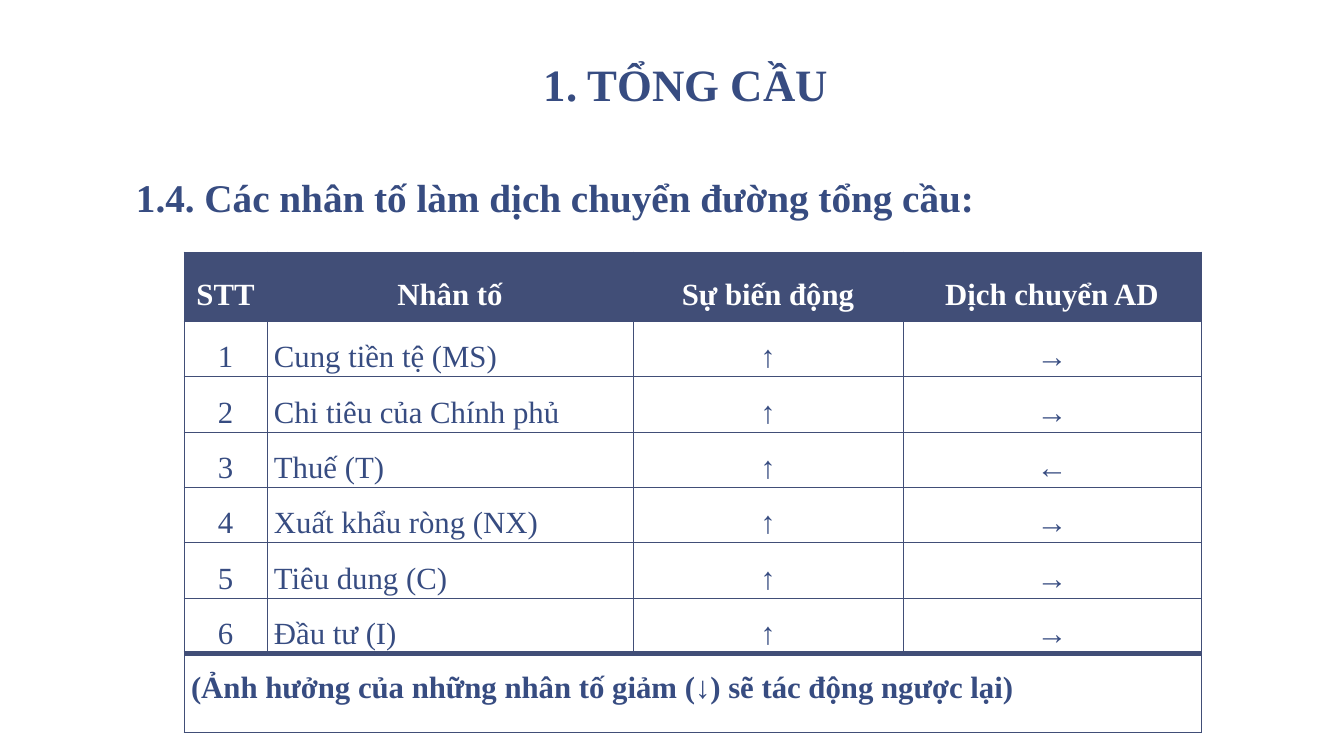
"""Build the slide on factors that shift aggregate demand."""
from lxml import etree
from pptx import Presentation
from pptx.dml.color import RGBColor
from pptx.enum.text import MSO_ANCHOR, PP_ALIGN
from pptx.oxml.ns import qn
from pptx.util import Pt

PX = 914400 / 100.8
CENTER, JUSTIFY, LEFT = PP_ALIGN.CENTER, PP_ALIGN.JUSTIFY, PP_ALIGN.LEFT
TOP, MIDDLE, BOTTOM = MSO_ANCHOR.TOP, MSO_ANCHOR.MIDDLE, MSO_ANCHOR.BOTTOM
HUES = {"text": "374C81", "line": "414E77", "head": "FFFFFF", "page": "FFFFFF"}


def px(n):
    return round(n * PX)


def write(frame, text, size, align, gap, hue="text", bold=True):
    para = frame.paragraphs[0]
    para.text = text
    para.alignment = align
    para.line_spacing = gap
    font = para.font
    font.name = "Times New Roman"
    font.size = Pt(size)
    font.bold = bold
    font.color.rgb = RGBColor.from_string(HUES[hue])


deck = Presentation()
deck.slide_width, deck.slide_height = px(1344), px(756)
slide = deck.slides.add_slide(deck.slide_layouts[6])
slide.background.fill.solid()
slide.background.fill.fore_color.rgb = RGBColor.from_string(HUES["page"])

heads = [
    ("1. TỔNG CẦU", 126, 17, 101, 32, CENTER, 0.85, BOTTOM),
    ("1.4. Các nhân tố làm dịch chuyển đường tổng cầu:", 123, 143, 537, 28, LEFT, 1.5, TOP),
]
for text, left, top, high, size, align, gap, anchor in heads:
    frame = slide.shapes.add_textbox(px(left), px(top), px(1120), px(high)).text_frame
    frame.word_wrap = True
    frame.vertical_anchor = anchor
    frame.margin_left = frame.margin_right = px(13)
    frame.margin_top = frame.margin_bottom = px(7)
    write(frame, text, size, align, gap)

factors = [
    ("Cung tiền tệ (MS)", "→"),
    ("Chi tiêu của Chính phủ", "→"),
    ("Thuế (T)", "←"),
    ("Xuất khẩu ròng (NX)", "→"),
    ("Tiêu dung (C)", "→"),
    ("Đầu tư (I)", "→"),
]
rows = [("STT", "Nhân tố", "Sự biến động", "Dịch chuyển AD")]
rows += [(str(n), name, "↑", shift) for n, (name, shift) in enumerate(factors, 1)]
rows.append(("(Ảnh hưởng của những nhân tố giảm (↓) sẽ tác động ngược lại)", "", "", ""))
widths = [83, 366, 270, 298]
highs = [69] + [51] * len(factors) + [79]
last = len(rows) - 1

table = slide.shapes.add_table(
    len(rows), len(widths), px(184), px(252), px(sum(widths)), px(sum(highs))
).table
table.first_row = table.horz_banding = False
for col, wide in zip(table.columns, widths):
    col.width = px(wide)
for row, high in zip(table.rows, highs):
    row.height = px(high)
table.cell(last, 0).merge(table.cell(last, len(widths) - 1))

for r, row in enumerate(rows):
    for c, text in enumerate(row):
        cell = table.cell(r, c)
        cell.margin_left = cell.margin_right = px(7)
        cell.margin_top = cell.margin_bottom = 0
        cell.vertical_anchor = TOP if r == last else MIDDLE
        props = cell._tc.get_or_add_tcPr()
        for side in ("L", "R", "T", "B"):
            thick = (r, side) in ((last, "T"), (last - 1, "B"))
            line = etree.SubElement(props, qn(f"a:ln{side}"), w=str(Pt(4 if thick else 0.5)))
            fill = etree.SubElement(line, qn("a:solidFill"))
            etree.SubElement(fill, qn("a:srgbClr"), val=HUES["line"])
        if r == 0:
            cell.fill.solid()
            cell.fill.fore_color.rgb = RGBColor.from_string(HUES["line"])
        else:
            cell.fill.background()
        if text:
            align = JUSTIFY if r == last or (r and c == 1) else CENTER
            hue = "text" if r else "head"
            write(cell.text_frame, text, 22, align, 1.5, hue, r in (0, last) or c == 3)

deck.save("out.pptx")
